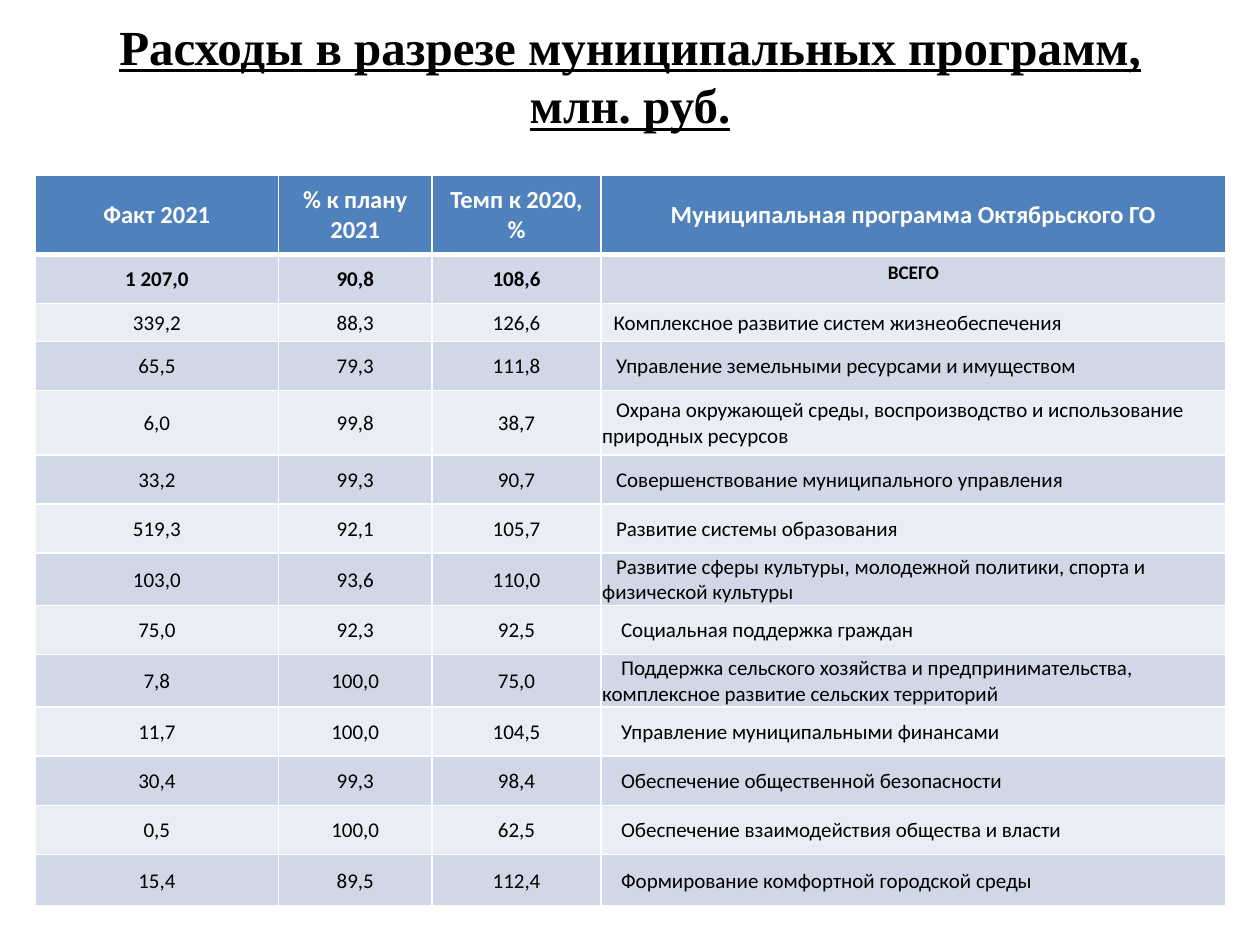
from typing import NamedTuple

from lxml.etree import SubElement
from pptx import Presentation
from pptx.dml.color import RGBColor
from pptx.enum.text import MSO_ANCHOR as Anchor, PP_ALIGN as Align
from pptx.oxml.ns import qn
from pptx.util import Inches, Pt

WHITE = RGBColor(0xFF, 0xFF, 0xFF)
BLACK = RGBColor(0x00, 0x00, 0x00)
HEADER_BLUE = RGBColor(0x4F, 0x81, 0xBD)
BAND_DARK = RGBColor(0xD0, 0xD8, 0xE8)
BAND_LIGHT = RGBColor(0xE9, 0xED, 0xF4)

TITLE = "Расходы в разрезе муниципальных программ, млн. руб."
HEADERS = ("Факт 2021", "% к плану 2021", "Темп к 2020, %",
           "Муниципальная программа Октябрьского ГО")
COLUMN_WIDTHS = (1.93, 1.22, 1.34, 4.96)
HEADER_HEIGHT = 0.63
NAME_COLUMN = len(HEADERS) - 1
TIGHT = 0.01


class Program(NamedTuple):
    fact: str
    plan_share: str
    growth: str
    name: str
    height: float = 0.39
    indent: float = 0.15


class CellStyle(NamedTuple):
    fill: RGBColor
    color: RGBColor = BLACK
    size: float = 12
    bold: bool = False
    align: Align = Align.CENTER
    anchor: Anchor = Anchor.MIDDLE
    indent: float = 0
    tight: bool = True
    top_line: float = 1
    bottom_line: float = 1


PROGRAMS = (
    Program("1 207,0", "90,8", "108,6", "ВСЕГО"),
    Program("339,2", "88,3", "126,6", "Комплексное развитие систем жизнеобеспечения", 0.3, 0.09),
    Program("65,5", "79,3", "111,8", "Управление земельными ресурсами и имуществом", indent=0.11),
    Program("6,0", "99,8", "38,7",
            "Охрана окружающей среды, воспроизводство и использование природных ресурсов",
            0.51, 0.11),
    Program("33,2", "99,3", "90,7", "Совершенствование муниципального управления", indent=0.11),
    Program("519,3", "92,1", "105,7", "Развитие системы образования", indent=0.11),
    Program("103,0", "93,6", "110,0",
            "Развитие сферы культуры, молодежной политики, спорта и физической культуры",
            0.41, 0.11),
    Program("75,0", "92,3", "92,5", "Социальная поддержка граждан"),
    Program("7,8", "100,0", "75,0",
            "Поддержка сельского хозяйства и предпринимательства, "
            "комплексное развитие сельских территорий", 0.41),
    Program("11,7", "100,0", "104,5", "Управление муниципальными финансами"),
    Program("30,4", "99,3", "98,4", "Обеспечение общественной безопасности"),
    Program("0,5", "100,0", "62,5", "Обеспечение взаимодействия общества и власти"),
    Program("15,4", "89,5", "112,4", "Формирование комфортной городской среды", 0.41),
)


def add_borders(cell, style: CellStyle) -> None:
    properties = cell._tc.get_or_add_tcPr()
    widths = {"a:lnL": 1, "a:lnR": 1, "a:lnT": style.top_line, "a:lnB": style.bottom_line}
    for tag, width in widths.items():
        line = SubElement(properties, qn(tag), w=str(Pt(width)))
        fill = SubElement(line, qn("a:solidFill"))
        SubElement(fill, qn("a:srgbClr"), val=str(WHITE))


def fill_cell(cell, text: str, style: CellStyle) -> None:
    add_borders(cell, style)
    cell.fill.solid()
    cell.fill.fore_color.rgb = style.fill
    cell.vertical_anchor = style.anchor
    if style.tight:
        cell.margin_left = cell.margin_right = cell.margin_top = Inches(TIGHT)
        cell.margin_bottom = 0
    cell.text_frame.text = text
    paragraph = cell.text_frame.paragraphs[0]
    paragraph.alignment = style.align
    if style.indent:
        paragraph._p.get_or_add_pPr().set("indent", str(Inches(style.indent)))
    font = paragraph.runs[0].font
    font.name = "Calibri"
    font.size = Pt(style.size)
    font.bold = style.bold
    font.color.rgb = style.color


def program_style(row: int, column: int, program: Program) -> CellStyle:
    """Style of a body cell; row 1 holds the bold totals."""
    style = CellStyle(BAND_DARK if row % 2 else BAND_LIGHT)
    if row == 1:
        style = style._replace(bold=True, top_line=3)
        if column == NAME_COLUMN:
            style = style._replace(size=11, anchor=Anchor.TOP, tight=False)
    elif column == NAME_COLUMN:
        style = style._replace(align=Align.LEFT, indent=program.indent)
    return style


def add_title(slide) -> None:
    title = slide.shapes.title
    title.left, title.top = Inches(0.5), Inches(0.13)
    title.width, title.height = Inches(9), Inches(0.93)
    frame = title.text_frame
    frame.text = TITLE
    frame.vertical_anchor = Anchor.MIDDLE
    frame.paragraphs[0].alignment = Align.CENTER
    font = frame.paragraphs[0].runs[0].font
    font.name = "Times New Roman"
    font.size = Pt(28)
    font.bold = font.underline = True
    font.color.rgb = BLACK


def add_program_table(slide) -> None:
    heights = (HEADER_HEIGHT, *(program.height for program in PROGRAMS))
    table = slide.shapes.add_table(
        len(heights), len(HEADERS), Inches(0.28), Inches(1.39),
        Inches(sum(COLUMN_WIDTHS)), Inches(sum(heights))).table
    for column, width in zip(table.columns, COLUMN_WIDTHS):
        column.width = Inches(width)
    for row, height in zip(table.rows, heights):
        row.height = Inches(height)

    header_style = CellStyle(HEADER_BLUE, WHITE, 14, True, tight=False, bottom_line=3)
    for column, text in enumerate(HEADERS):
        fill_cell(table.cell(0, column), text, header_style)
    for row, program in enumerate(PROGRAMS, start=1):
        for column, text in enumerate(program[:len(HEADERS)]):
            fill_cell(table.cell(row, column), text, program_style(row, column, program))


def main() -> None:
    presentation = Presentation()
    presentation.slide_width, presentation.slide_height = Inches(10), Inches(7.5)
    slide = presentation.slides.add_slide(presentation.slide_layouts.get_by_name("Title Only"))
    add_title(slide)
    add_program_table(slide)
    presentation.save("out.pptx")


if __name__ == "__main__":
    main()
